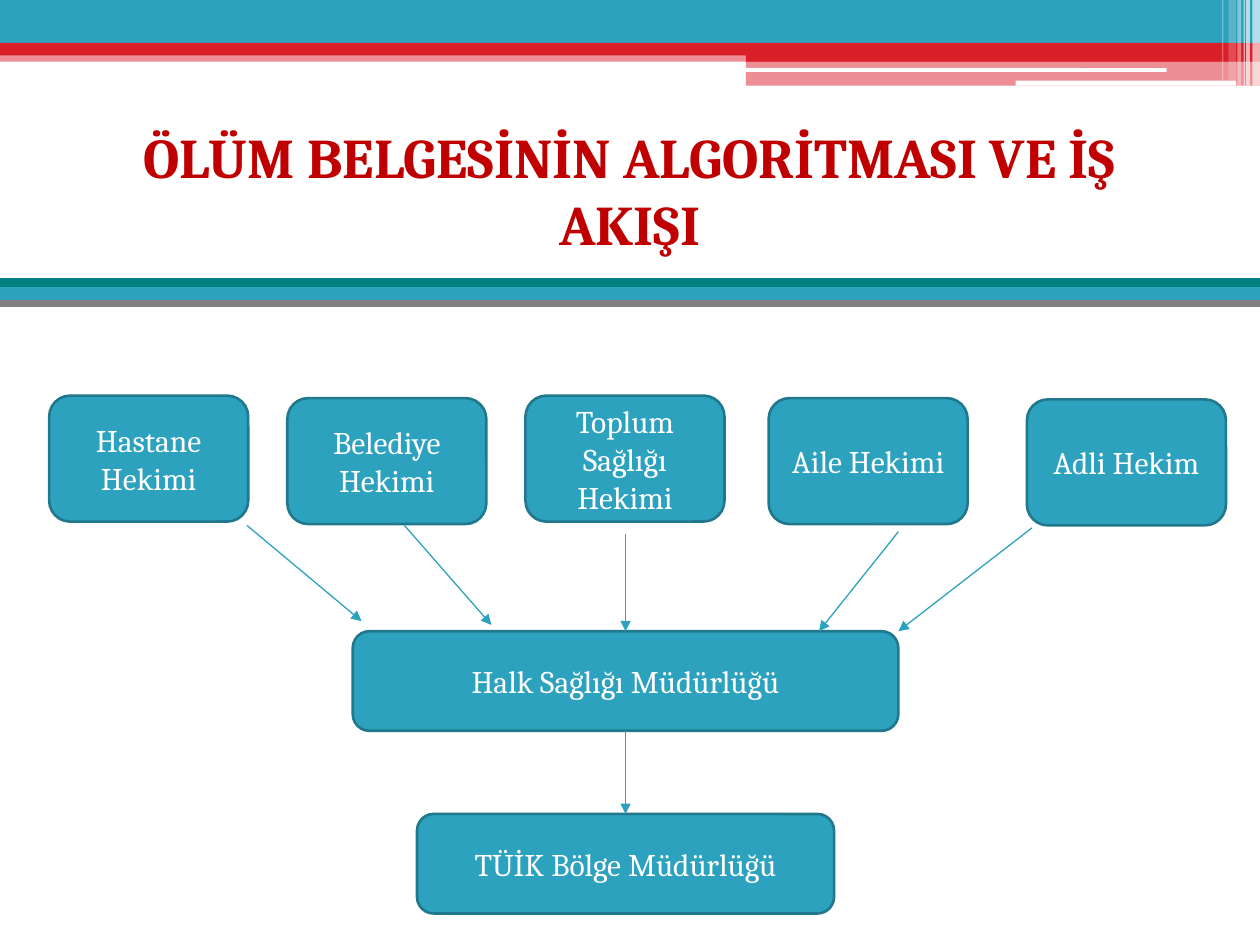
import collections

import pptx
import pptx.dml.color
import pptx.enum.shapes
import pptx.enum.text
import pptx.oxml.ns
import pptx.util
from lxml import etree

# The grid has 100 columns and 75 rows of square cells.
CELL = pptx.util.Inches(0.1)
COLUMNS, ROWS = 100, 75
FONT = "Cambria"
COLORS = {
    "teal": "2DA2BF", "edge": "21788D", "red": "DA1F28", "title": "C00000",
    "green": "008080", "gray": "808080", "white": "FFFFFF",
}
SHAPES = pptx.enum.shapes.MSO_SHAPE
CENTER = pptx.enum.text.PP_ALIGN.CENTER
MIDDLE = pptx.enum.text.MSO_ANCHOR.MIDDLE

Box = collections.namedtuple("Box", "left top width height")


def rgb(name):
    return pptx.dml.color.RGBColor.from_string(COLORS[name])


def cells(*counts):
    return [round(count * CELL) for count in counts]


def inside(box, left, top, width, height):
    """Turn a place within the box into a place on the page."""
    return Box(box.left + left, box.top + top, width, height)


def apply_format(target, values):
    for name, value in values.items():
        setattr(target, name, value)


def add_child(parent, tag, **attributes):
    return etree.SubElement(parent, pptx.oxml.ns.qn(tag), attributes)


def write_text(shape, text, size, color, bold=False):
    frame = shape.text_frame
    apply_format(frame, {"word_wrap": True, "text": text})
    para = frame.paragraphs[0]
    para.alignment = CENTER
    span = para.runs[0]
    apply_format(span.font, {"name": FONT, "size": pptx.util.Pt(size), "bold": bold})
    span.font.color.rgb = rgb(color)


def add_block(page, box, color, opacity=100, kind=SHAPES.RECTANGLE):
    shape = page.shapes.add_shape(kind, *cells(*box))
    shape.shadow.inherit = False
    shape.fill.solid()
    shape.fill.fore_color.rgb = rgb(color)
    shape.line.fill.background()
    if opacity < 100:
        tint = shape._element.spPr.find(".//" + pptx.oxml.ns.qn("a:srgbClr"))
        add_child(tint, "a:alpha", val=str(opacity * 1000))
    return shape


def add_line(page, start, end, color, weight, arrow=False):
    line = page.shapes.add_connector(
        pptx.enum.shapes.MSO_CONNECTOR.STRAIGHT, *cells(*start, *end))
    line.line.color.rgb = rgb(color)
    line.line.width = pptx.util.Pt(weight)
    if arrow:
        add_child(line.line._get_or_add_ln(), "a:tailEnd", type="triangle")
    add_child(line._element.spPr, "a:effectLst")
    return line


def add_arrow(page, start, end):
    return add_line(page, start, end, "teal", 0.75, arrow=True)


def add_node(page, box, text):
    node = add_block(page, box, "teal", kind=SHAPES.ROUNDED_RECTANGLE)
    node.line.color.rgb = rgb("edge")
    node.line.width = pptx.util.Pt(1.5)
    write_text(node, text, 18, "white")
    node.text_frame.vertical_anchor = MIDDLE
    return node


def build_banner(page, box):
    half = 59.2
    bands = [
        (0, 4, 4.0, 0.9, "red", 50),
        (0, 0, 0, 3.4, "teal", 100),
        (0, 3.4, 0, 1, "red", 100),
        (half, 3.9, 0, 1, "red", 100),
        (half, 4.8, 0, 2, "red", 50),
    ]
    for left, top, _, height, color, opacity in bands:
        add_block(page, inside(box, left, top, box.width - left, height), color, opacity)

    for place in [(59.1, 5.4, 33.5, 0.3), (80.6, 6.4, 17.5, 0.4)]:
        add_block(page, inside(box, *place), "white", kind=SHAPES.ROUNDED_RECTANGLE)

    stripes = [(99.4, 0.6, 6.8, 65), (98.9, 0.3, 6.8, 65), (98.7, 0.1, 6.8, 60),
               (98.2, 0.3, 6.8, 40), (97.5, 0.6, 6.4, 20), (97, 0.1, 6.4, 30)]
    for left, width, height, opacity in stripes:
        add_block(page, inside(box, left, 0, width, height), "white", opacity)


def build_title(page, box):
    title = page.shapes.add_textbox(*cells(*box))
    write_text(title, "ÖLÜM BELGESİNİN ALGORİTMASI VE İŞ AKIŞI", 32, "title", bold=True)


def build_divider(page, box):
    for row, (color, weight) in enumerate([("green", 6), ("teal", 7), ("gray", 4)]):
        height = box.top + row * box.height / 2
        add_line(page, (box.left, height), (box.left + box.width, height), color, weight)


def build_flow(page, box):
    """Physicians on top report to the directorate, which reports to the office."""
    physicians = [
        ("Hastane Hekimi", 3.9, 0),
        ("Belediye Hekimi", 22.8, 0.2),
        ("Toplum Sağlığı Hekimi", 41.7, 0),
        ("Aile Hekimi", 61, 0.2),
        ("Adli Hekim", 81.5, 0.3),
    ]
    for text, left, top in physicians:
        add_node(page, inside(box, left, top, 15.8, 10), text)

    directorate = add_node(page, inside(box, 28, 18.7, 43.3, 7.9), "Halk Sağlığı Müdürlüğü")
    office = add_node(page, inside(box, 33.1, 33.2, 33.1, 7.9), "TÜİK Bölge Müdürlüğü")

    # Each arrow runs from (column, row) to (column, row) within the box.
    routes = [
        (19.6, 10.3, 28.7, 17.9),
        (32.1, 10.3, 39, 18.2),
        (71.3, 10.8, 65, 18.7),
        (81.9, 10.5, 71.3, 18.7),
    ]
    for x1, y1, x2, y2 in routes:
        add_arrow(page, (box.left + x1, box.top + y1), (box.left + x2, box.top + y2))

    axis = box.left + 49.65
    middle = add_arrow(page, (axis, box.top + 11), (axis, box.top + 18.7))
    middle.end_connect(directorate, 0)
    down = add_arrow(page, (axis, box.top + 26.6), (axis, box.top + 33.2))
    down.begin_connect(directorate, 2)
    down.end_connect(office, 0)


def main():
    deck = pptx.Presentation()
    apply_format(deck, {"slide_width": COLUMNS * CELL, "slide_height": ROWS * CELL})
    page = deck.slides.add_slide(deck.slide_layouts[6])
    build_banner(page, Box(0, 0, COLUMNS, 6.8))
    build_flow(page, Box(0, 31.4, COLUMNS, 41.1))
    build_divider(page, Box(0, 22.5, COLUMNS, 1.6))
    build_title(page, Box(7.5, 9.2, 85, 11.8))
    deck.save("out.pptx")


if __name__ == "__main__":
    main()
